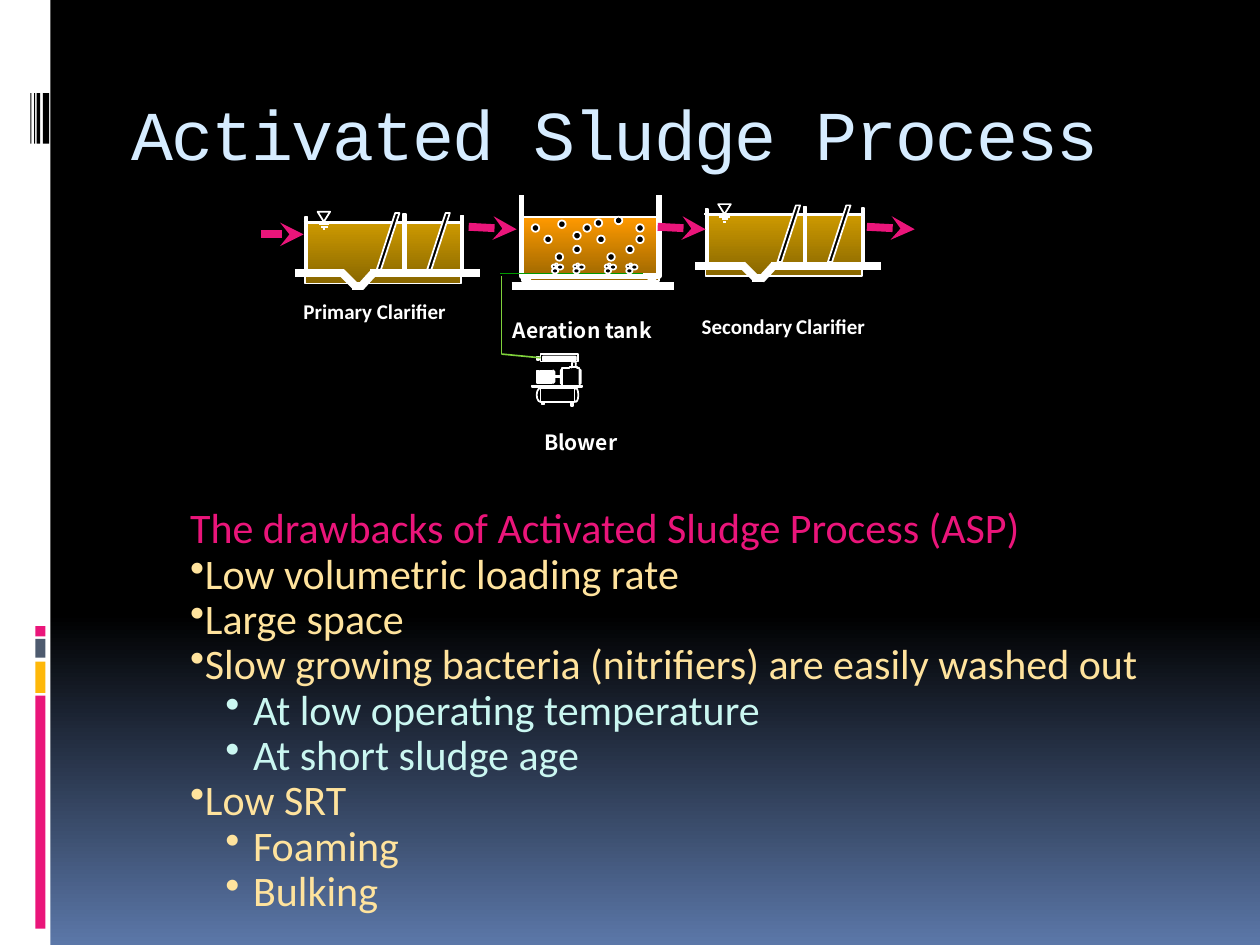
import copy

import pptx
import pptx.dml.color
import pptx.enum.shapes
import pptx.enum.text
import pptx.oxml
import pptx.oxml.ns
import pptx.util

RGBColor = pptx.dml.color.RGBColor
SHAPE = pptx.enum.shapes.MSO_SHAPE
WHITE = RGBColor(0xFF, 0xFF, 0xFF)
BLACK = RGBColor(0x00, 0x00, 0x00)
PINK = RGBColor(0xEA, 0x15, 0x7A)
AMBER = RGBColor(0xFE, 0xB8, 0x0A)
SLATE = RGBColor(0x4E, 0x5B, 0x6F)
SKY = RGBColor(0x5B, 0x77, 0xA8)
PALE_BLUE = RGBColor(0xD6, 0xEC, 0xFF)
CREAM = RGBColor(0xFF, 0xE3, 0x9D)
MINT = RGBColor(0xCA, 0xF7, 0xF1)
GREEN = RGBColor(0x00, 0x99, 0x00)
LIME = RGBColor(0x7F, 0xD1, 0x3B)
TANK_FILL = [RGBColor(0xFF, 0x99, 0x00), RGBColor(0x99, 0x66, 0x00)]
SLUDGE_FILL = [RGBColor(0xCC, 0x99, 0x00), RGBColor(0x89, 0x67, 0x00)]

# The slide is a grid of 1000 columns by 750 rows; all places count its cells.
COLUMNS, ROWS = 1000, 750
CELL = pptx.util.Inches(0.01)


def cells(*counts):
    return [pptx.util.Emu(round(count * CELL)) for count in counts]


def make_gradient(fill, first, last):
    fill.gradient()
    fill.gradient_angle = 270
    for stop, color, position in zip(fill.gradient_stops, (first, last), (0, 1)):
        stop.color.rgb = color
        stop.position = position


def paint(shape, fill=None, line=WHITE, width=1):
    shape.shadow.inherit = False
    if fill is None:
        shape.fill.background()
    elif isinstance(fill, list):
        make_gradient(shape.fill, *fill)
    else:
        shape.fill.solid()
        shape.fill.fore_color.rgb = fill
    if line is None:
        shape.line.fill.background()
    else:
        shape.line.color.rgb = line
        shape.line.width = pptx.util.Pt(width)


def add_block(shapes, box, fill=None, kind=SHAPE.RECTANGLE, line=WHITE, adjust=None, turn=0):
    shape = shapes.add_shape(kind, *cells(*box))
    paint(shape, fill, line)
    if adjust is not None:
        shape.adjustments[0] = adjust
    shape.rotation = turn
    return shape


def add_outline(shapes, points, fill=None, width=1, close=False):
    corners = [tuple(cells(*point)) for point in points]
    builder = shapes.build_freeform(*corners[0], scale=1.0)
    builder.add_line_segments(corners[1:], close=close)
    paint(builder.convert_to_shape(), fill, WHITE, width)


def add_line(shapes, ends, color=WHITE, width=1, arrow=False):
    connector = shapes.add_connector(pptx.enum.shapes.MSO_CONNECTOR.STRAIGHT, *cells(*ends))
    connector.line.color.rgb = color
    connector.line.width = pptx.util.Pt(width)
    properties = connector._element.spPr
    if arrow:
        head = pptx.oxml.parse_xml(f'<a:tailEnd {pptx.oxml.ns.nsdecls("a")} type="stealth"/>')
        properties.ln.append(head)
    properties.append(pptx.oxml.parse_xml(f'<a:effectLst {pptx.oxml.ns.nsdecls("a")}/>'))
    return connector


def set_font(paragraph, name, size, color, bold=False):
    font = paragraph.font
    font.name, font.size, font.bold = name, pptx.util.Pt(size), bold
    font.color.rgb = color


def add_text_frame(slide, box):
    frame = slide.shapes.add_textbox(*cells(*box)).text_frame
    frame.word_wrap = True
    return frame


def add_label(slide, box, words, font="Calibri", spacing=0.8, indent=0):
    paragraph = add_text_frame(slide, box).paragraphs[0]
    paragraph.line_spacing = spacing
    paragraph._p.get_or_add_pPr().set("marL", str(cells(indent)[0]))
    set_font(paragraph, font, 12, WHITE, bold=True)
    for word in words:
        run = paragraph.add_run()
        run.text = word
        if word == " ":
            run.font.size = pptx.util.Pt(9)


def set_bullet(paragraph, level):
    properties = paragraph._p.get_or_add_pPr()
    margin, hanging = cells(50 * level, -22 * level)
    properties.set("marL", str(margin))
    properties.set("indent", str(hanging))
    properties.append(pptx.oxml.parse_xml(f'<a:buChar {pptx.oxml.ns.nsdecls("a")} char="•"/>'))


def add_background(slide):
    make_gradient(slide.background.fill, BLACK, SKY)
    first_stop = slide._element.xpath(".//p:bg//a:gs")[0]
    middle_stop = copy.deepcopy(first_stop)
    middle_stop.set("pos", "65000")
    first_stop.addnext(middle_stop)


def add_side_band(slide):
    add_block(slide.shapes, (0, 0, 40, ROWS), WHITE, line=None)
    for top, height, color in ((552, 185, PINK), (525, 25, AMBER), (507, 15, SLATE), (497, 8, PINK)):
        add_block(slide.shapes, (28, top, 8, height), color, line=None)
    for left, width in ((34, 5), (29, 3), (27, 1), (24, 1)):
        add_block(slide.shapes, (left, 74, width, 40), BLACK, line=None)


def add_title(slide):
    title = slide.shapes.title
    title.left, title.top, title.width, title.height = cells(94, 55, 850, 100)
    title.text_frame.text = "Activated Sludge Process"
    title.text_frame.vertical_anchor = pptx.enum.text.MSO_ANCHOR.MIDDLE
    paragraph = title.text_frame.paragraphs[0]
    paragraph.alignment = pptx.enum.text.PP_ALIGN.LEFT
    set_font(paragraph, "Courier New", 40, PALE_BLUE)
    paragraph.font._element.set("spc", "-100")


def add_clarifier(slide, x, y):
    shapes = slide.shapes
    add_block(shapes, (x, y, 124, 48), SLUDGE_FILL)
    add_line(shapes, (x - 1, y - 1, x + 126, y - 1))
    # Walls and the partition
    for left, top in ((0, -5), (124, -6), (78, -7)):
        add_block(shapes, (x + left, y + top, 2, 44), WHITE)
    # Water level mark
    add_block(shapes, (x + 10, y - 9, 10, 8), BLACK, SHAPE.ISOSCELES_TRIANGLE, turn=180)
    for start, end, drop in ((11, 19, 1), (13, 18, 3), (14, 16, 5)):
        add_line(shapes, (x + start, y + drop, x + end, y + drop))
    # Slanted baffles
    for left in (57, 97):
        add_block(shapes, (x + left, y - 8, 18, 45), BLACK, SHAPE.PARALLELOGRAM, adjust=0.815)
    # Floor with its hopper
    for x1, y1, x2, y2 in ((-8, 40, 31, 40), (52, 40, 139, 40), (40, 50, 29, 39),
                           (37, 50, 46, 50), (44, 51, 54, 40)):
        add_line(shapes, (x + x1, y + y1, x + x2, y + y2), width=4.5)


def add_aeration_tank(slide):
    shapes = slide.shapes
    add_block(shapes, (414, 172, 109, 51), TANK_FILL)
    add_block(shapes, (415, 219, 6, 3), WHITE, SHAPE.RIGHT_TRIANGLE)
    add_block(shapes, (516, 217, 3, 6), WHITE, SHAPE.RIGHT_TRIANGLE, turn=270)
    add_line(shapes, (406, 227, 535, 227), width=4.5)
    add_outline(shapes, ((414, 155), (414, 219), (523, 219), (523, 155)), width=3)
    add_line(shapes, (397, 217, 510, 217), GREEN)
    # Diffuser clusters, then rising bubbles
    cluster = ((0, 210, 3, 3), (0, 213, 5, 4), (2.5, 209, 2, 2), (4, 210, 5, 4))
    bubbles = [(left + shift, *rest) for left in (438, 455, 480, 497) for shift, *rest in cluster]
    bubbles += [(left, top, 6, 6) for left, top in (
        (441, 201), (443, 175), (455, 195), (432, 187), (463, 178), (422, 178), (455, 184),
        (482, 201), (488, 172), (497, 195), (474, 187), (505, 178), (472, 174), (505, 187))]
    for bubble in bubbles:
        add_block(shapes, bubble, BLACK, SHAPE.OVAL)


def add_blower(slide):
    shapes = slide.shapes.add_group_shape().shapes
    # Air receiver with feet and base plate
    for box in ((455, 308, 4, 11), (426, 308, 6, 11)):
        add_block(shapes, box, BLACK, SHAPE.OVAL)
    add_block(shapes, (429, 308, 27, 11), BLACK)
    for box in ((430, 320, 2, 1), (453, 320, 2, 2), (422, 306, 40, 1)):
        add_block(shapes, box, PALE_BLUE)
    # Intake housing, motor and shaft
    intake = add_block(shapes, (429, 281, 30, 6))
    for box in ((426, 294, 2, 10), (429, 294, 9, 10), (440, 298, 5, 1), (426, 283, 2, 3)):
        add_block(shapes, box)
    for left, step, top, height, fill in ((439, 1, 294, 10, None), (446, -1, 293, 12, PALE_BLUE),
                                          (460, 1, 293, 12, None)):
        add_outline(shapes, ((left, top), (left + step, top + 1), (left + step, top + height - 1),
                             (left, top + height)), fill, close=True)
    # Compressor head
    add_block(shapes, (454, 287, 3, 2), BLACK, SHAPE.OVAL)
    add_block(shapes, (453, 288, 4, 4), BLACK, line=None)
    add_outline(shapes, ((454, 288), (454, 291), (453, 292)))
    add_outline(shapes, ((457, 288), (457, 291), (459, 292)))
    add_outline(shapes, ((460, 292), (458, 292), (458, 291), (452, 291), (452, 292),
                         (446, 292), (446, 306), (460, 306)), close=True)
    # Intake slots and motor fins
    for top in range(283, 286):
        add_block(shapes, (431, top, 26, 1), kind=SHAPE.ROUNDED_RECTANGLE, adjust=0.125)
    for row in range(295, 305):
        add_line(shapes, (428, row, 438, row))
    return intake


def add_drawbacks(slide):
    frame = add_text_frame(slide, (141, 398, 805, 337))
    lines = (("The drawbacks of Activated Sludge Process (ASP)", None, PINK),
             ("Low volumetric loading rate", 0, CREAM),
             ("Large space", 0, CREAM),
             ("Slow growing bacteria (nitrifiers) are easily washed out", 0, CREAM),
             ("At low operating temperature", 1, MINT),
             ("At short sludge age", 1, MINT),
             ("Low SRT", 0, CREAM),
             ("Foaming", 1, CREAM),
             ("Bulking", 1, CREAM))
    for number, (text, level, color) in enumerate(lines):
        paragraph = frame.add_paragraph() if number else frame.paragraphs[0]
        paragraph.text = text
        paragraph.line_spacing = 0.9
        if level is not None:
            paragraph.level = level
            set_bullet(paragraph, level)
        set_font(paragraph, "Calibri", 24, color)


def main():
    presentation = pptx.Presentation()
    presentation.slide_width, presentation.slide_height = cells(COLUMNS, ROWS)
    slide = presentation.slides.add_slide(presentation.slide_layouts[5])
    add_background(slide)
    add_side_band(slide)
    add_title(slide)

    # Process units and the flow between them
    add_aeration_tank(slide)
    add_clarifier(slide, 242, 177)
    add_clarifier(slide, 560, 171)
    add_line(slide.shapes, (207, 186, 241, 186), PINK, 4.5, arrow=True)
    for left in (372, 522, 688):
        add_line(slide.shapes, (left, 180, left + 38, 182), PINK, 4.5, arrow=True)

    # Blower and its air pipe
    intake = add_blower(slide)
    add_line(slide.shapes, (398, 219, 398, 281), LIME, 0.94)
    add_line(slide.shapes, (398, 281, 429, 284), LIME, 0.94).end_connect(intake, 1)

    # Labels
    add_label(slide, (224, 236, 158, 27), ["Primary Clarifier"], indent=7)
    add_label(slide, (547, 248, 192, 28), ["Secondary", " ", "Clarifier"])
    add_label(slide, (397, 247, 173, 30), ["Aeration tank"], "Noto Sans CJK KR", 1.0)
    add_label(slide, (422, 336, 86, 30), ["Blower"], "Noto Sans CJK KR", 1.0)
    add_drawbacks(slide)
    presentation.save("out.pptx")


if __name__ == "__main__":
    main()
